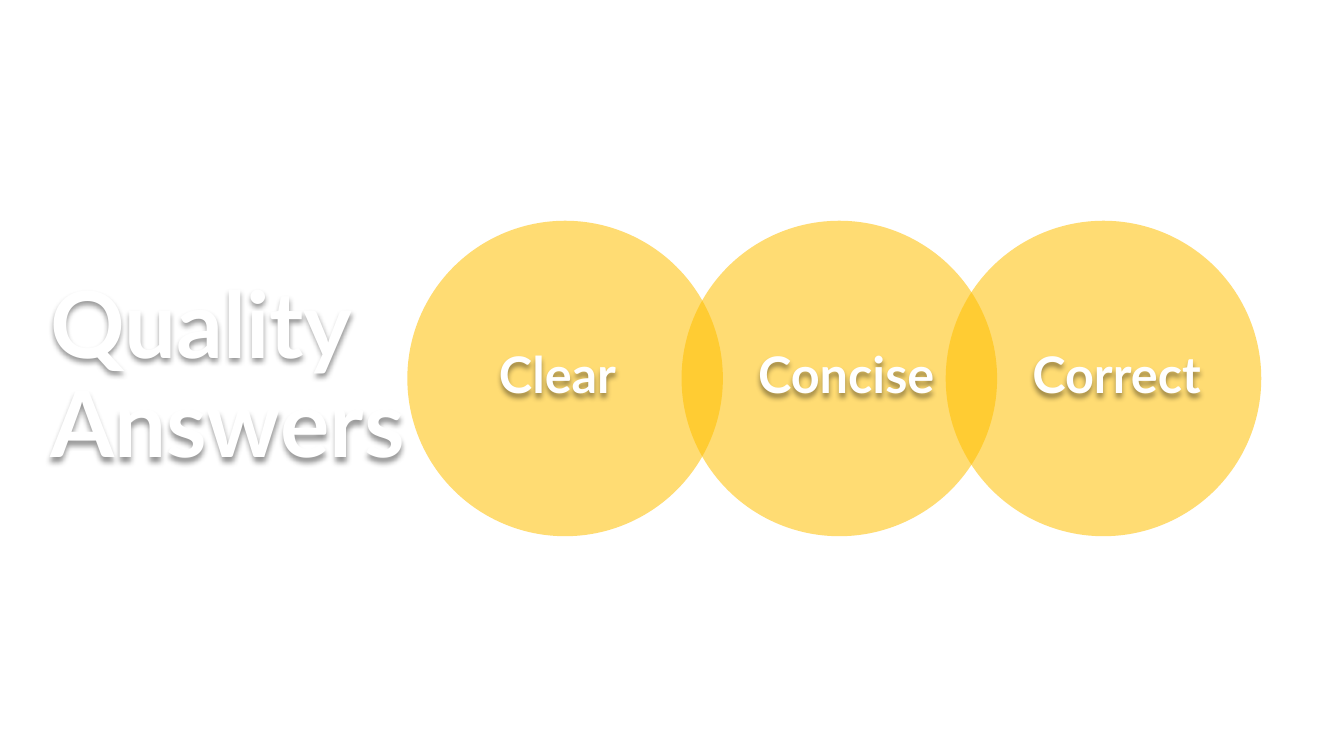
from lxml.etree import SubElement
from pptx import Presentation
from pptx.dml.color import RGBColor
from pptx.enum.shapes import MSO_SHAPE as SHAPE
from pptx.enum.text import MSO_ANCHOR as ANCHOR, PP_ALIGN as ALIGN
from pptx.oxml import parse_xml
from pptx.oxml.ns import nsdecls, qn
from pptx.util import Inches, Pt

COLORS = {"text": "FFFFFF", "circle": "FFC000", "shadow": "000000"}
FONT = "Lato"
DIAMETER = 3.13
CIRCLE_TOP = 2.19
LABEL_TOP = 3.42
QUALITIES = [
    ("Concise", 6.76, 7.42, ALIGN.LEFT),
    ("Correct", 9.38, 10.14, ALIGN.LEFT),
    ("Clear", 4.04, 4.55, ALIGN.CENTER),
]


def add_shadow(sp):
    """Cast a soft shadow straight below the text of an unfilled box."""
    sp._element.spPr.append(parse_xml(
        f'<a:effectLst {nsdecls("a")}>'
        '<a:outerShdw blurRad="50800" dist="38100" dir="5400000" algn="t" rotWithShape="0">'
        f'<a:srgbClr val="{COLORS["shadow"]}"><a:alpha val="40000"/></a:srgbClr>'
        '</a:outerShdw></a:effectLst>'))


def add_text(s, text, left, top, width, height, size=36, align=ALIGN.LEFT, anchor=ANCHOR.TOP):
    """Add a bold, shadowed text box."""
    sp = s.shapes.add_textbox(Inches(left), Inches(top), Inches(width), Inches(height))
    add_shadow(sp)
    tf = sp.text_frame
    tf.word_wrap = True
    tf.vertical_anchor = anchor
    p = tf.paragraphs[0]
    p.alignment = align
    p.line_spacing = 0.9
    r = p.add_run()
    r.text = text
    r.font.name = FONT
    r.font.size = Pt(size)
    r.font.bold = True
    r.font.color.rgb = RGBColor.from_string(COLORS["text"])


def add_circle(s, left):
    """Add a translucent circle in the row."""
    sp = s.shapes.add_shape(SHAPE.OVAL, Inches(left), Inches(CIRCLE_TOP),
                            Inches(DIAMETER), Inches(DIAMETER))
    sp.shadow.inherit = False
    sp.line.fill.background()
    sp.fill.solid()
    sp.fill.fore_color.rgb = RGBColor.from_string(COLORS["circle"])
    color = sp._element.spPr.find(qn("a:solidFill")).find(qn("a:srgbClr"))
    SubElement(color, qn("a:alpha"), val="55000")


def main():
    """Build and save the slide."""
    prs = Presentation()
    prs.slide_width, prs.slide_height = Inches(13.33), Inches(7.5)
    s = prs.slides.add_slide(prs.slide_layouts[6])
    add_text(s, "Quality Answers", 0.4, 2.71, 3.74, 2.08, size=66, anchor=ANCHOR.MIDDLE)
    for label, circle_left, label_left, align in QUALITIES:
        add_circle(s, circle_left)
        add_text(s, label, label_left, LABEL_TOP, 1.96, 0.84, align=align)
    prs.save("out.pptx")


if __name__ == "__main__":
    main()
